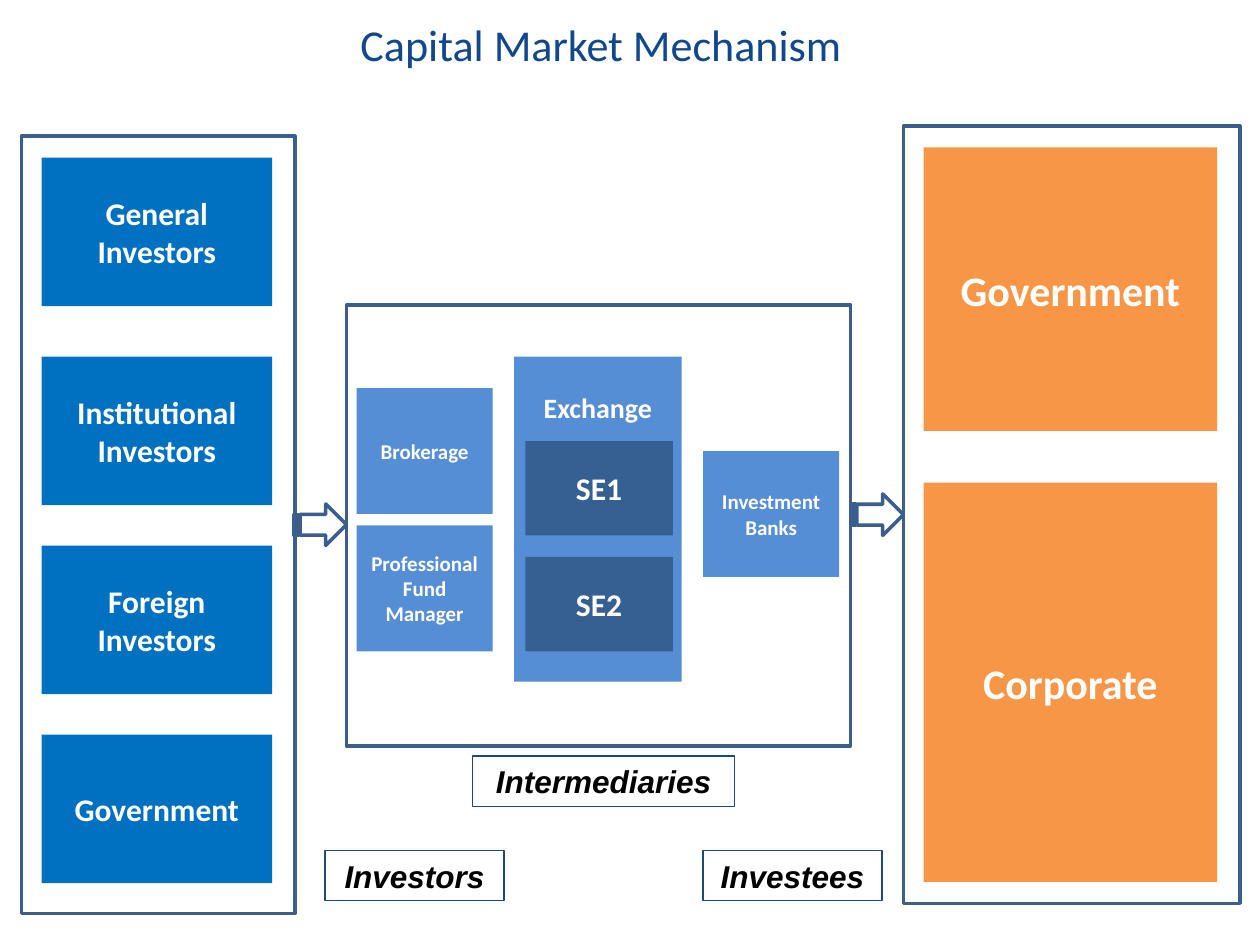
import pptx
import pptx.dml.color
import pptx.enum.shapes
import pptx.enum.text
import pptx.util
from dataclasses import dataclass

Inches = pptx.util.Inches
Shapes = pptx.enum.shapes.MSO_SHAPE
Anchor = pptx.enum.text.MSO_ANCHOR


@dataclass(frozen=True)
class Theme:
    title: str = "11478B"
    investor: str = "0070C0"
    investee: str = "F79646"
    intermediary: str = "558ED5"
    exchange: str = "376092"
    frame: str = "3A5F8C"
    label_line: str = "1F497D"
    white: str = "FFFFFF"
    black: str = "000000"
    body_font: str = "Calibri"
    label_font: str = "Arial"
    title_size: float = 25.2
    large: int = 24
    medium: int = 18
    heading: int = 16
    small: int = 12
    frame_width: float = 2
    label_width: float = 0.75


class SlideBuilder:
    def __init__(self, slide, theme):
        self.slide = slide
        self.theme = theme

    def color(self, value):
        return pptx.dml.color.RGBColor.from_string(value)

    def shape(self, kind, bounds, fill=None, line=None, width=0):
        shape = self.slide.shapes.add_shape(kind, *map(Inches, bounds))
        shape.shadow.inherit = False
        if fill:
            shape.fill.solid()
            shape.fill.fore_color.rgb = self.color(fill)
        else:
            shape.fill.background()
        if line:
            shape.line.color.rgb = self.color(line)
            shape.line.width = pptx.util.Pt(width)
        else:
            shape.line.fill.background()
        return shape

    def set_text(self, shape, text, size, color, font, bold=True, italic=False):
        frame = shape.text_frame
        frame.word_wrap = True
        frame.vertical_anchor = Anchor.MIDDLE
        paragraph = frame.paragraphs[0]
        paragraph.text = text
        paragraph.alignment = pptx.enum.text.PP_ALIGN.CENTER
        paragraph.font.name = font
        paragraph.font.size = pptx.util.Pt(size)
        paragraph.font.bold = bold
        paragraph.font.italic = italic
        paragraph.font.color.rgb = self.color(color)

    def title(self, text, bounds):
        box = self.slide.shapes.add_textbox(*map(Inches, bounds))
        self.set_text(box, text, self.theme.title_size, self.theme.title,
                      self.theme.body_font, bold=False)

    def block(self, text, bounds, fill, size):
        shape = self.shape(Shapes.RECTANGLE, bounds, fill)
        self.set_text(shape, text, size, self.theme.white, self.theme.body_font)
        return shape

    def headed_block(self, text, bounds, fill, size, inset):
        shape = self.block(text, bounds, fill, size)
        shape.text_frame.vertical_anchor = Anchor.TOP
        shape.text_frame.margin_top = Inches(inset)

    def frame(self, bounds):
        self.shape(Shapes.RECTANGLE, bounds, line=self.theme.frame,
                   width=self.theme.frame_width)

    def arrow(self, left, top):
        self.shape(Shapes.STRIPED_RIGHT_ARROW, (left, top, 0.42, 0.33),
                   self.theme.white, self.theme.frame, self.theme.frame_width)

    def label(self, text, left, top, width):
        shape = self.shape(Shapes.RECTANGLE, (left, top, width, 0.4),
                           line=self.theme.label_line, width=self.theme.label_width)
        self.set_text(shape, text, self.theme.medium, self.theme.black,
                      self.theme.label_font, italic=True)


def main():
    presentation = pptx.Presentation()
    presentation.slide_width = Inches(10)
    presentation.slide_height = Inches(7.5)
    theme = Theme()
    slide = presentation.slides.add_slide(presentation.slide_layouts[6])
    builder = SlideBuilder(slide, theme)

    builder.title("Capital Market Mechanism", (0.67, 0.08, 8.2, 0.53))

    for text, top, height in (("Corporate", 3.83, 3.17), ("Government", 1.17, 2.25)):
        builder.block(text, (7.33, top, 2.33, height), theme.investee, theme.large)

    investors = (("General Investors", 1.25), ("Institutional Investors", 2.83),
                 ("Foreign Investors", 4.33), ("Government", 5.83))
    for text, top in investors:
        builder.block(text, (0.33, top, 1.83, 1.18), theme.investor, theme.medium)

    builder.headed_block("Exchange", (4.08, 2.83, 1.33, 2.58),
                         theme.intermediary, theme.heading, 0.27)
    for text, top in (("SE1", 3.5), ("SE2", 4.42)):
        builder.block(text, (4.17, top, 1.17, 0.75), theme.exchange, theme.medium)

    intermediaries = (("Brokerage", 2.83, 3.08),
                      ("Professional Fund Manager", 2.83, 4.17),
                      ("Investment Banks", 5.58, 3.58))
    for text, left, top in intermediaries:
        builder.block(text, (left, top, 1.08, 1), theme.intermediary, theme.small)

    for bounds in ((0.17, 1.08, 2.17, 6.17), (7.17, 1, 2.67, 6.17),
                   (2.75, 2.42, 4, 3.5)):
        builder.frame(bounds)

    builder.arrow(2.33, 4)
    builder.arrow(6.75, 3.92)

    builder.label("Investors", 2.58, 6.75, 1.42)
    builder.label("Intermediaries", 3.75, 6, 2.08)
    builder.label("Investees", 5.58, 6.75, 1.42)

    presentation.save("out.pptx")


if __name__ == "__main__":
    main()
